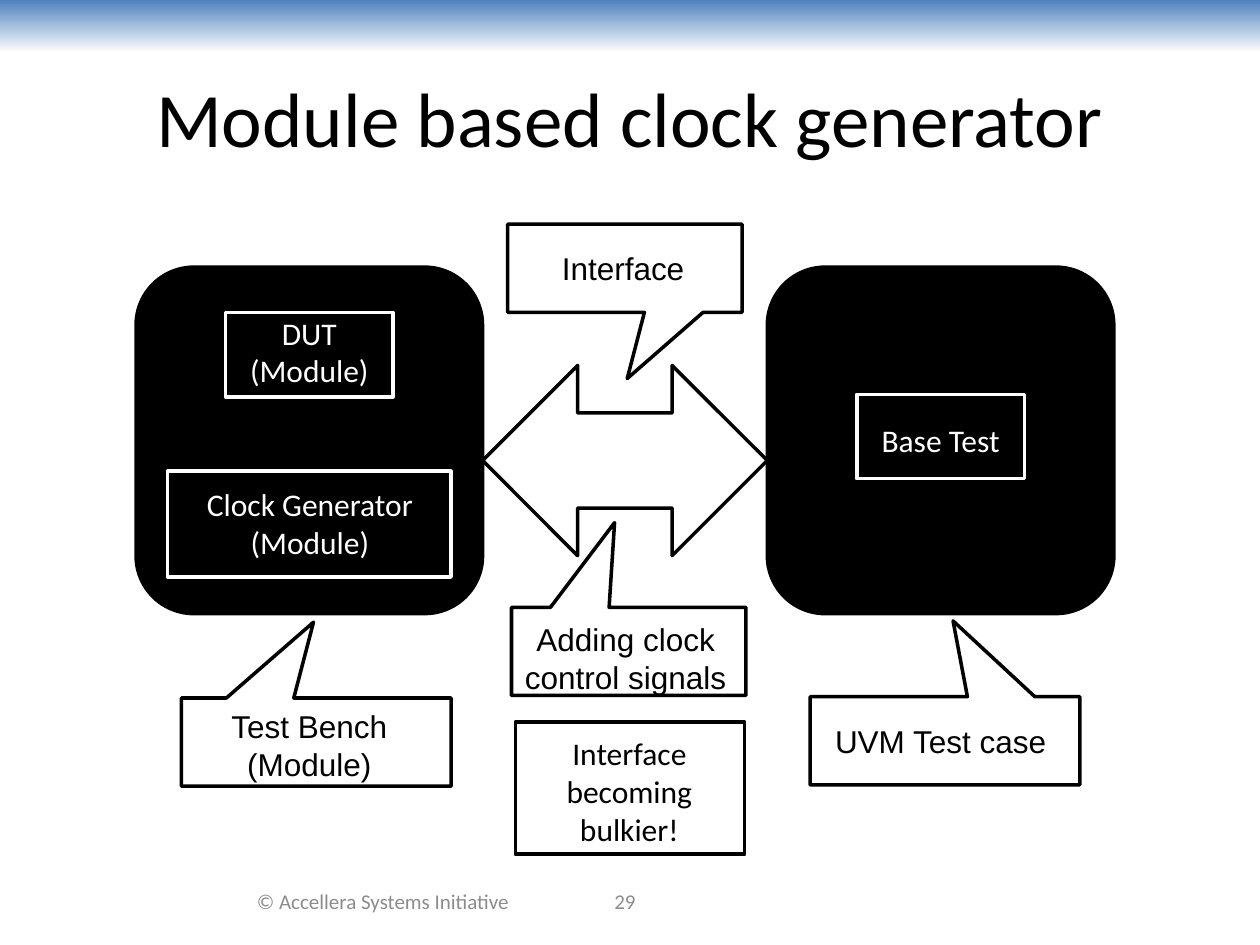
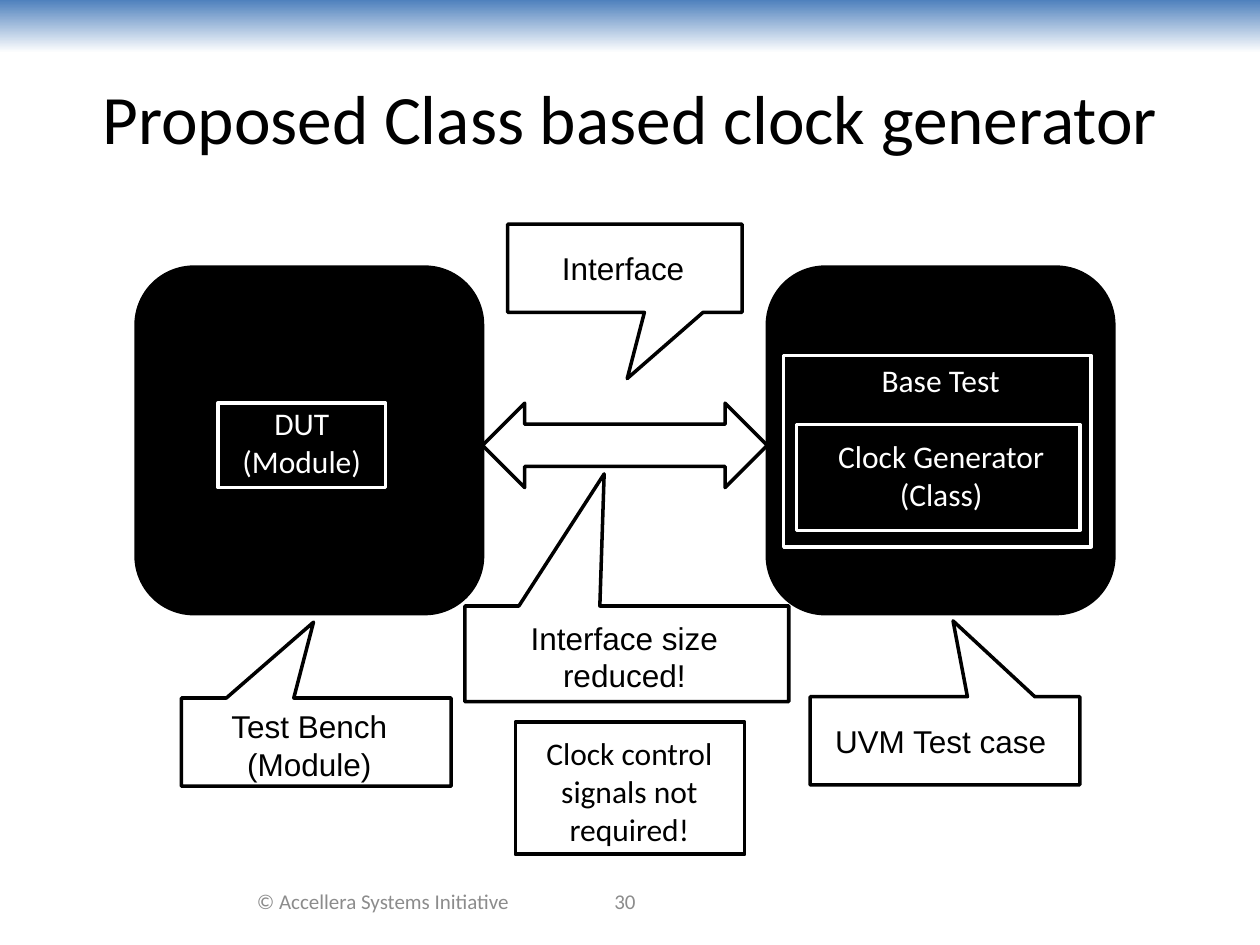
from pptx import Presentation
from pptx.dml.color import RGBColor
from pptx.enum.shapes import MSO_SHAPE as Shape
from pptx.enum.text import MSO_ANCHOR as Anchor, MSO_AUTO_SIZE as AutoSize, PP_ALIGN as Align
from pptx.util import Emu, Pt

PX = 9144  # EMU per px, 100 px to the inch
BLACK = RGBColor(0, 0, 0)
WHITE = RGBColor(255, 255, 255)
GREY = RGBColor(0x8C, 0x8C, 0x8C)
BLUE = RGBColor(0x4F, 0x81, 0xBD)

SLIDE_SIZE = (1000, 750)
BAND = (0, 0, 1000, 42)
TITLE = (50, 30, 900, 125)
COPYRIGHT = "© Accellera Systems Initiative"
COPYRIGHT_BOX = (183, 695, 242, 40)
NUMBER_BOX = (400, 695, 192, 40)
FIRST_NUMBER = 29

BODIES = [(108, 212, 275, 275), (609, 212, 275, 275)]
NOTE = (409, 573, 182, 105)
NOTE_LABEL = (417, 578, 165, 101)

# Callouts: text, label box, outline, pointer tip relative to the outline's centre
SHARED_CALLOUTS = [
    ("Test Bench (Module)", (151, 556, 189, 71), (144, 554, 214, 70), (-0.01, -1.36)),
    ("UVM Test case", (652, 568, 189, 40), (643, 553, 214, 70), (0.03, -1.36)),
    ("Interface", (400, 193, 189, 40), (403, 178, 186, 70), (0.01, 1.25)),
]

# Blocks: text, label box, outline
SLIDES = [
    {
        "title": "Module based clock generator",
        "title_size": 44,
        "blocks": [
            ("DUT (Module)", (185, 244, 121, 71), (179, 248, 133, 67)),
            ("Clock Generator (Module)", (144, 380, 204, 71), (133, 374, 225, 84)),
            ("Base Test", (686, 329, 121, 40), (680, 313, 133, 67)),
        ],
        "interface": (383, 290, 226, 151),
        "callout": ("Adding clock control signals", (402, 487, 189, 71),
                    (406, 482, 186, 70), (-0.06, -1.46)),
        "note": "Interface becoming bulkier!",
    },
    {
        "title": "Proposed Class based clock generator",
        "title_size": 39.6,
        "blocks": [
            ("DUT (Module)", (179, 316, 121, 71), (173, 320, 133, 67)),
            ("Base Test", (686, 282, 121, 40), (622, 282, 244, 152)),
            ("Clock Generator (Class)", (645, 342, 204, 71), (632, 337, 225, 84)),
        ],
        "interface": (383, 320, 226, 67),
        "callout": ("Interface size reduced!", (365, 486, 261, 71),
                    (369, 481, 257, 76), (-0.07, -1.88)),
        "note": "Clock control signals not required!",
    },
]


def emu(box):
    return [Emu(value * PX) for value in box]


def add_outline(slide, preset, box, line=BLACK, fill=None):
    outline = slide.shapes.add_shape(preset, *emu(box))
    outline.shadow.inherit = False
    if fill is None:
        outline.fill.background()
    else:
        outline.fill.solid()
        outline.fill.fore_color.rgb = fill
    outline.line.color.rgb = line
    outline.line.width = Pt(2)
    return outline


def write(frame, text, size, font, color, anchor):
    frame.word_wrap = True
    frame.auto_size = AutoSize.NONE
    frame.vertical_anchor = anchor
    paragraph = frame.paragraphs[0]
    paragraph.text = text
    paragraph.alignment = Align.CENTER
    paragraph.font.size = Pt(size)
    paragraph.font.name = font
    paragraph.font.color.rgb = color


def add_label(slide, text, box, size=18, font="Calibri", color=BLACK, anchor=Anchor.TOP):
    label = slide.shapes.add_textbox(*emu(box))
    write(label.text_frame, text, size, font, color, anchor)


def add_callout(slide, text, label_box, box, tip):
    callout = add_outline(slide, Shape.RECTANGULAR_CALLOUT, box)
    callout.adjustments[0], callout.adjustments[1] = tip
    add_label(slide, text, label_box, font="Arial")


def add_frame(slide, title, title_size, number):
    """Add what every slide carries: band, title, copyright and number."""
    band = slide.shapes.add_shape(Shape.RECTANGLE, *emu(BAND))
    band.shadow.inherit = False
    band.line.fill.background()
    band.fill.gradient()
    band.fill.gradient_angle = 270
    for stop, color in zip(band.fill.gradient_stops, (BLUE, WHITE)):
        stop.color.rgb = color

    heading = slide.shapes.title
    heading.left, heading.top, heading.width, heading.height = emu(TITLE)
    write(heading.text_frame, title, title_size, "Calibri", BLACK, Anchor.MIDDLE)

    for text, box in ((COPYRIGHT, COPYRIGHT_BOX), (str(number), NUMBER_BOX)):
        add_label(slide, text, box, size=12, color=GREY, anchor=Anchor.MIDDLE)


def add_diagram(slide, content):
    for body in BODIES:
        add_outline(slide, Shape.ROUNDED_RECTANGLE, body, fill=BLACK)
    for text, label_box, box in content["blocks"]:
        add_outline(slide, Shape.RECTANGLE, box, line=WHITE)
        add_label(slide, text, label_box, color=WHITE)
    add_outline(slide, Shape.LEFT_RIGHT_ARROW, content["interface"], fill=WHITE)
    for callout in SHARED_CALLOUTS + [content["callout"]]:
        add_callout(slide, *callout)
    add_outline(slide, Shape.RECTANGLE, NOTE)
    add_label(slide, content["note"], NOTE_LABEL)


def main():
    deck = Presentation()
    deck.slide_width, deck.slide_height = emu(SLIDE_SIZE)
    title_only = deck.slide_layouts[5]
    for number, content in enumerate(SLIDES, FIRST_NUMBER):
        slide = deck.slides.add_slide(title_only)
        add_frame(slide, content["title"], content["title_size"], number)
        add_diagram(slide, content)
    deck.save("out.pptx")


if __name__ == "__main__":
    main()
